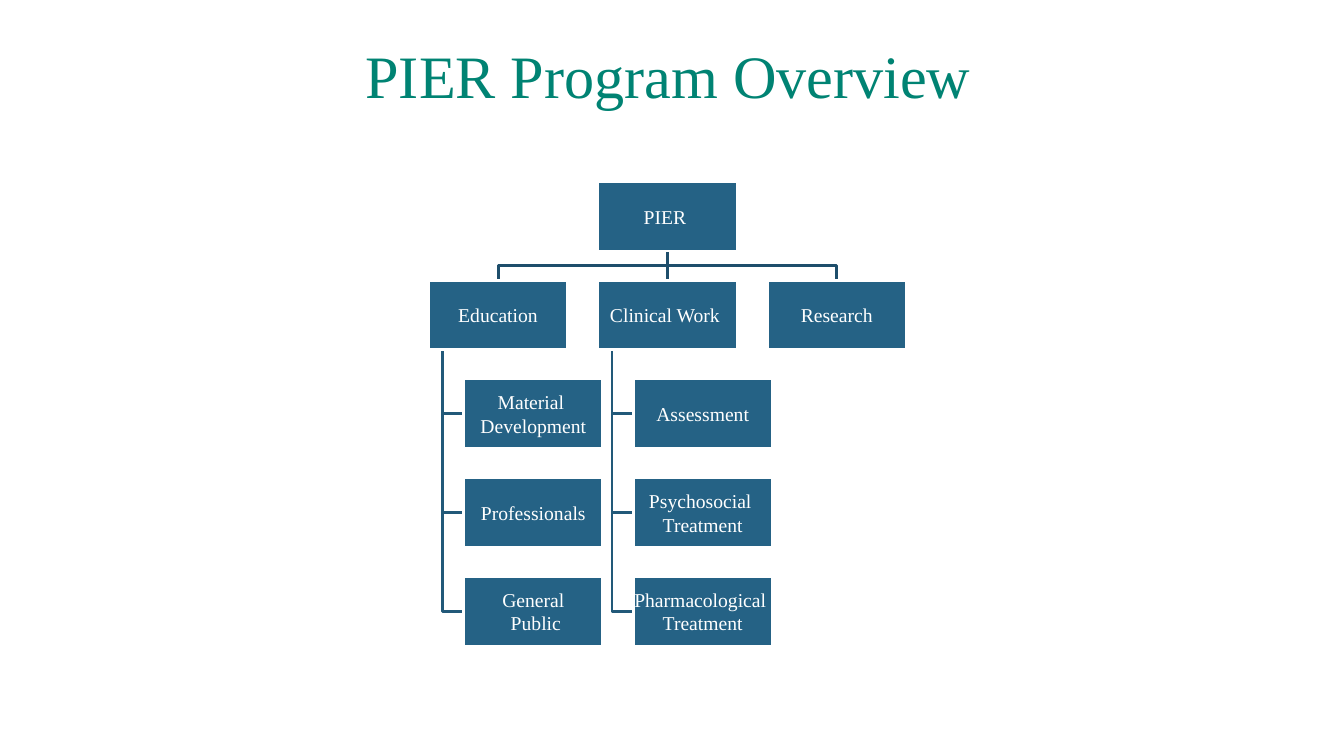
from dataclasses import dataclass

from pptx import Presentation
from pptx.dml.color import RGBColor
from pptx.enum.shapes import MSO_CONNECTOR, MSO_SHAPE
from pptx.enum.text import MSO_ANCHOR, PP_ALIGN
from pptx.oxml.ns import qn
from pptx.shapes.autoshape import Shape
from pptx.shapes.connector import Connector
from pptx.slide import Slide
from pptx.text.text import TextFrame
from pptx.util import Inches, Pt

TEAL = RGBColor(0x00, 0x83, 0x73)
BLUE = RGBColor(0x25, 0x62, 0x85)
BRANCH_LINE = RGBColor(0x1E, 0x4E, 0x6B)
TOPIC_LINE = RGBColor(0x22, 0x59, 0x79)
WHITE = RGBColor(0xFF, 0xFF, 0xFF)

FONT = "Times New Roman"
LINE_WIDTH = Pt(2)
BOX_W, BOX_H = 1.38, 0.69
LEFT, TOP = 4.25, 1.80
COL_PITCH, ROW_PITCH = 1.68, 0.98
TOPIC_INDENT, TRUNK_INDENT = 0.35, 0.14
INSET = 0.01

Point = tuple[float, float]


@dataclass(frozen=True)
class Branch:
    name: str
    topics: tuple[str, ...] = ()


ROOT = "PIER "
BRANCHES = (
    Branch("Education", ("Material \nDevelopment", "Professionals", "General\n Public")),
    Branch("Clinical Work ", ("Assessment", "Psychosocial \nTreatment",
                              "Pharmacological \nTreatment")),
    Branch("Research"),
)
MIDDLE = 1  # column under the root


def column_x(col: int) -> float:
    return LEFT + col * COL_PITCH


def row_y(row: int) -> float:
    return TOP + row * ROW_PITCH


def write_text(tf: TextFrame, text: str, size: float, color: RGBColor,
               inset_x: float, inset_y: float) -> None:
    tf.word_wrap = True
    tf.vertical_anchor = MSO_ANCHOR.MIDDLE
    tf.margin_left = tf.margin_right = Inches(inset_x)
    tf.margin_top = tf.margin_bottom = Inches(inset_y)
    tf.text = text
    for p in tf.paragraphs:
        p.alignment = PP_ALIGN.CENTER
        p.font.name = FONT
        p.font.size = Pt(size)
        p.font.color.rgb = color


def add_title(s: Slide, text: str) -> None:
    tb = s.shapes.add_textbox(Inches(2.75), Inches(0.11), Inches(7.75), Inches(1.25))
    write_text(tb.text_frame, text, 43, TEAL, 0.09, 0.04)


def add_box(s: Slide, x: float, y: float, text: str) -> Shape:
    sp = s.shapes.add_shape(MSO_SHAPE.RECTANGLE, Inches(x), Inches(y),
                            Inches(BOX_W), Inches(BOX_H))
    sp.shadow.inherit = False
    sp.fill.solid()
    sp.fill.fore_color.rgb = BLUE
    sp.line.color.rgb = WHITE
    sp.line.width = LINE_WIDTH
    write_text(sp.text_frame, text, 14, WHITE, INSET, INSET)
    return sp


def add_elbow(s: Slide, points: list[Point], color: RGBColor) -> None:
    """Draw an open, right-angled line through the points."""
    start, *rest = [(Inches(x), Inches(y)) for x, y in points]
    builder = s.shapes.build_freeform(*start)
    builder.add_line_segments(rest, close=False)
    sp = builder.convert_to_shape()
    sp.shadow.inherit = False
    sp.fill.background()
    sp.line.color.rgb = color
    sp.line.width = LINE_WIDTH


def add_stem(s: Slide, x: float, top: float, bottom: float) -> Connector:
    """Add the straight line from the root to the branch below it."""
    stem = s.shapes.add_connector(MSO_CONNECTOR.STRAIGHT, Inches(x), Inches(top),
                                  Inches(x), Inches(bottom))
    stem.line.color.rgb = BRANCH_LINE
    stem.line.width = LINE_WIDTH
    sp_pr = stem._element.spPr
    sp_pr.append(sp_pr.makeelement(qn("a:effectLst"), {}))
    return stem


def add_chart_lines(s: Slide) -> Connector:
    """Draw every line of the tree and return the stem, to be joined to its boxes."""
    root_x = column_x(MIDDLE) + BOX_W / 2
    root_bottom, branch_top = row_y(0) + BOX_H, row_y(1)
    bar_y = (root_bottom + branch_top) / 2
    for col, branch in enumerate(BRANCHES):
        x = column_x(col)
        if col != MIDDLE:
            mid = x + BOX_W / 2
            add_elbow(s, [(root_x, root_bottom), (root_x, bar_y),
                          (mid, bar_y), (mid, branch_top)], BRANCH_LINE)
        trunk = x + TRUNK_INDENT
        for row in range(2, 2 + len(branch.topics)):
            y = row_y(row) + BOX_H / 2
            add_elbow(s, [(trunk, row_y(1) + BOX_H), (trunk, y),
                          (x + TOPIC_INDENT, y)], TOPIC_LINE)
    return add_stem(s, root_x, root_bottom, branch_top)


def add_org_chart(s: Slide) -> None:
    stem = add_chart_lines(s)
    stem.begin_connect(add_box(s, column_x(MIDDLE), row_y(0), ROOT), 2)
    for col, branch in enumerate(BRANCHES):
        x = column_x(col)
        box = add_box(s, x, row_y(1), branch.name)
        if col == MIDDLE:
            stem.end_connect(box, 0)
        for row, topic in enumerate(branch.topics, start=2):
            add_box(s, x + TOPIC_INDENT, row_y(row), topic)


def main() -> None:
    prs = Presentation()
    prs.slide_width, prs.slide_height = Inches(13.33), Inches(7.5)
    s = prs.slides.add_slide(prs.slide_layouts[6])
    add_title(s, "PIER Program Overview")
    add_org_chart(s)
    prs.save("out.pptx")


if __name__ == "__main__":
    main()
